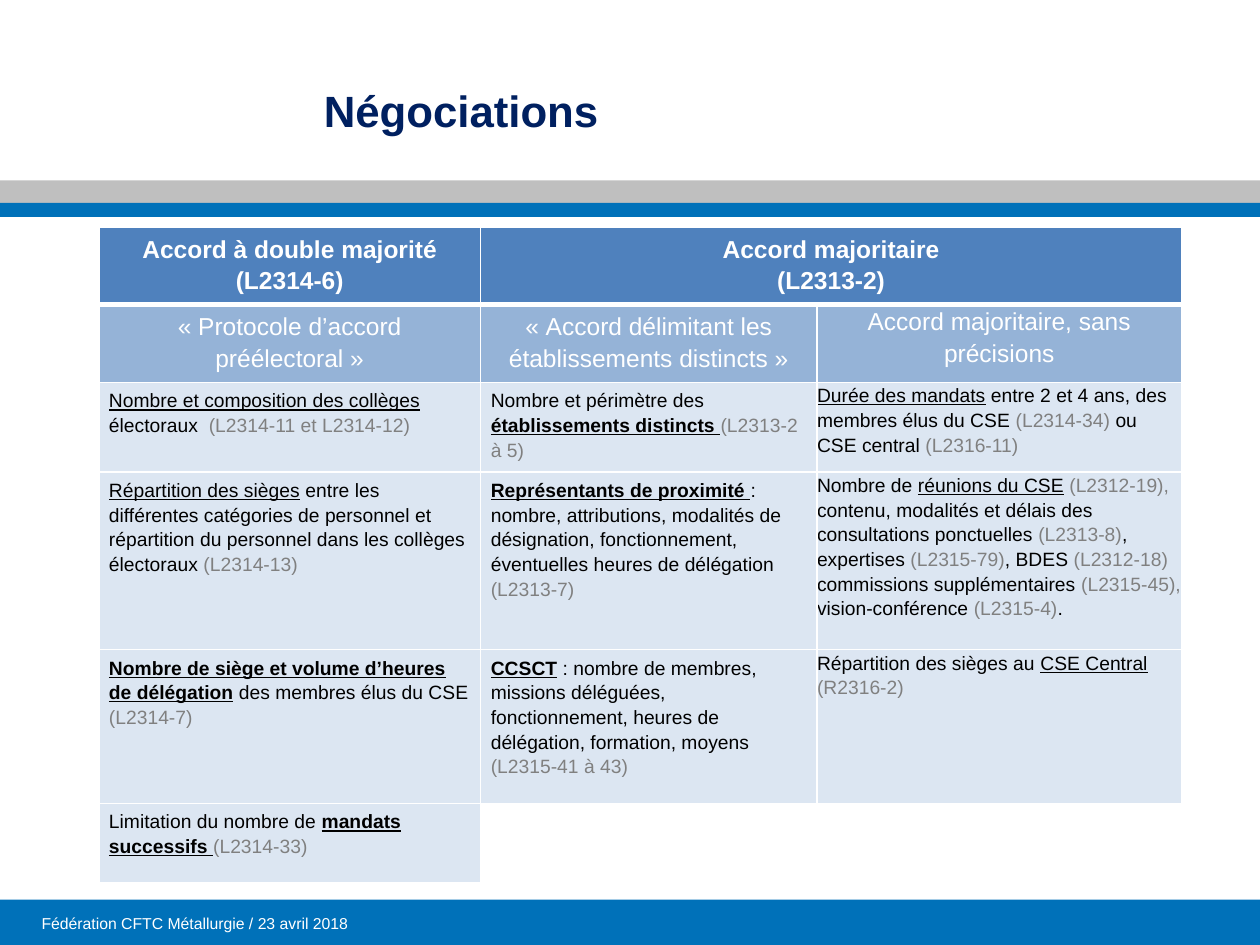
from typing import NamedTuple

from lxml.etree import SubElement
from pptx import Presentation
from pptx.dml.color import RGBColor
from pptx.enum.shapes import MSO_SHAPE as Preset
from pptx.enum.text import MSO_ANCHOR as Anchor, PP_ALIGN as Align
from pptx.oxml.ns import qn
from pptx.util import Pt

WHITE = RGBColor(0xFF, 0xFF, 0xFF)
BLACK = RGBColor(0x00, 0x00, 0x00)
NAVY = RGBColor(0x00, 0x20, 0x60)
BLUE = RGBColor(0x00, 0x71, 0xB9)
SILVER = RGBColor(0xBF, 0xBF, 0xBF)
GRAY = RGBColor(0x80, 0x80, 0x80)
HEADER_BLUE = RGBColor(0x4F, 0x81, 0xBD)
SUBHEADER_BLUE = RGBColor(0x95, 0xB3, 0xD7)
PALE_BLUE = RGBColor(0xDC, 0xE6, 0xF2)
FONT = "Arial"


class Band(NamedTuple):
    top: float
    height: float
    color: RGBColor


class Label(NamedTuple):
    text: str
    left: float
    top: float
    width: float
    height: float
    size: float
    color: RGBColor
    bold: bool = False
    anchor: Anchor = Anchor.TOP


class Piece(NamedTuple):
    text: str
    color: RGBColor = BLACK
    bold: bool = False
    underline: bool = False


def article(text: str) -> Piece:
    return Piece(text, color=GRAY)


def topic(text: str) -> Piece:
    return Piece(text, underline=True)


def key_topic(text: str) -> Piece:
    return Piece(text, bold=True, underline=True)


BANDS = [
    Band(514.1, 25.9, BLUE),
    Band(103, 13, SILVER),
    Band(116, 7.9, BLUE),
]
TITLE = Label("Négociations", 157.7, 44.6, 501.8, 54.7, 25, NAVY, bold=True)
FOOTER = Label("Fédération CFTC Métallurgie / 23 avril 2018",
               17.3, 514.8, 227.5, 25.2, 9, WHITE, anchor=Anchor.MIDDLE)

COLUMN_WIDTHS = [218.2, 192.2, 208.4]
ROW_HEIGHTS = [43.2, 43.2, 49.7, 101.5, 87.8, 45.4]
HEADERS = ["Accord à double majorité\v(L2314-6)", "Accord majoritaire\v(L2313-2)"]
SUBHEADERS = [
    "«\u00a0Protocole d’accord préélectoral\u00a0»",
    "«\u00a0Accord délimitant les établissements distincts\u00a0»",
    "Accord majoritaire, sans précisions",
]
SUBJECTS = [
    [
        [topic("Nombre et composition des collèges "), Piece("électoraux  "),
         article("(L2314-11 et L2314-12)")],
        [Piece("Nombre et périmètre des "), key_topic("établissements distincts"),
         topic(" "), article("(L2313-2 à 5)")],
        [topic("Durée des mandats"), Piece(" entre 2 et 4 ans, des membres élus du CSE "),
         article("(L2314-34) "), Piece("ou CSE central "), article("(L2316-11)")],
    ],
    [
        [topic("Répartition des sièges"),
         Piece(" entre les différentes catégories de personnel et répartition "
               "du personnel dans les collèges électoraux "),
         article("(L2314-13)")],
        [key_topic("Représentants de proximité"), topic(" "),
         Piece(": nombre, attributions, modalités de désignation, fonctionnement, "
               "éventuelles heures de délégation "),
         article("(L2313-7)")],
        [Piece("Nombre de "), topic("réunions du CSE"), Piece(" "),
         article("(L2312-19), "),
         Piece("contenu, modalités et délais des consultations ponctuelles "),
         article("(L2313-8)"), Piece(", expertises "), article("(L2315-79)"),
         Piece(", BDES "), article("(L2312-18)"),
         Piece(" commissions supplémentaires "), article("(L2315-45), "),
         Piece("vision-conférence "), article("(L2315-4)"), Piece(".")],
    ],
    [
        [key_topic("Nombre de siège et volume d’heures de délégation"),
         Piece(" des membres élus du CSE "), article("(L2314-7)")],
        [key_topic("CCSCT"),
         Piece(" : nombre de membres, missions déléguées, fonctionnement, "
               "heures de délégation, formation, moyens "),
         article("(L2315-41 à 43)")],
        [Piece("Répartition des sièges au "), topic("CSE Central"), Piece(" "),
         article("(R2316-2)")],
    ],
    [
        [Piece("Limitation du nombre de "), key_topic("mandats successifs "),
         article("(L2314-33)")],
    ],
]


def style(font, size: float, color: RGBColor, bold=False, underline=False) -> None:
    font.name = FONT
    font.size = Pt(size)
    font.bold = bold
    font.underline = underline
    font.color.rgb = color


def draw_band(slide, band: Band, width: int) -> None:
    bar = slide.shapes.add_shape(Preset.RECTANGLE, 0, Pt(band.top), width, Pt(band.height))
    bar.shadow.inherit = False
    bar.fill.solid()
    bar.fill.fore_color.rgb = band.color
    bar.line.fill.background()


def draw_label(slide, label: Label):
    box = slide.shapes.add_textbox(Pt(label.left), Pt(label.top),
                                   Pt(label.width), Pt(label.height))
    frame = box.text_frame
    frame.word_wrap = True
    frame.vertical_anchor = label.anchor
    frame.margin_left = frame.margin_right = Pt(6.5)
    frame.margin_top = frame.margin_bottom = Pt(3.6)
    frame.text = label.text
    paragraph = frame.paragraphs[0]
    style(paragraph.runs[0].font, label.size, label.color, label.bold)
    return paragraph


def draw_borders(cell, top: float, bottom: float) -> None:
    properties = cell._tc.get_or_add_tcPr()
    for side, weight in (("L", 1), ("R", 1), ("T", top), ("B", bottom)):
        line = SubElement(properties, qn(f"a:ln{side}"), w=str(Pt(weight)))
        fill = SubElement(line, qn("a:solidFill"))
        SubElement(fill, qn("a:srgbClr"), val=str(WHITE))


def fill_cell(cell, color: RGBColor, pieces: list[Piece], size: float,
              align: Align, inset: bool) -> None:
    cell.fill.solid()
    cell.fill.fore_color.rgb = color
    cell.margin_left = cell.margin_right = Pt(5.8 if inset else 0)
    cell.margin_top = cell.margin_bottom = Pt(2.9 if inset else 0)
    paragraph = cell.text_frame.paragraphs[0]
    paragraph.alignment = align
    paragraph.line_spacing = 1.15
    paragraph.space_after = Pt(10)
    for piece in pieces:
        if "\v" in piece.text:
            paragraph.text = piece.text
            runs = paragraph.runs
        else:
            runs = [paragraph.add_run()]
            runs[0].text = piece.text
        for run in runs:
            style(run.font, size, piece.color, piece.bold, piece.underline)


def draw_agreements(slide) -> None:
    table = slide.shapes.add_table(len(ROW_HEIGHTS), len(COLUMN_WIDTHS), Pt(56.5), Pt(129.6),
                                   Pt(sum(COLUMN_WIDTHS)), Pt(sum(ROW_HEIGHTS))).table
    table.first_row = table.horz_banding = False
    for column, width in zip(table.columns, COLUMN_WIDTHS):
        column.width = Pt(width)
    for index, (row, height) in enumerate(zip(table.rows, ROW_HEIGHTS)):
        row.height = Pt(height)
        for cell in row.cells:
            draw_borders(cell, 3 if index == 1 else 1, 3 if index == 0 else 1)
            cell.fill.background()
    table.cell(0, 1).merge(table.cell(0, 2))

    for column, text in enumerate(HEADERS):
        fill_cell(table.cell(0, column), HEADER_BLUE, [Piece(text, WHITE, bold=True)],
                  14, Align.CENTER, True)
    for column, text in enumerate(SUBHEADERS):
        fill_cell(table.cell(1, column), SUBHEADER_BLUE, [Piece(text, WHITE)],
                  14, Align.CENTER, column < 2)
    for row, subjects in enumerate(SUBJECTS, start=2):
        for column, pieces in enumerate(subjects):
            fill_cell(table.cell(row, column), PALE_BLUE, pieces, 11, Align.LEFT, column < 2)


def main() -> None:
    deck = Presentation()
    deck.slide_width, deck.slide_height = Pt(720), Pt(540)
    slide = deck.slides.add_slide(deck.slide_layouts[6])
    for band in BANDS:
        draw_band(slide, band, deck.slide_width)
    title_indent = draw_label(slide, TITLE)._p.get_or_add_pPr()
    title_indent.set("marL", str(Pt(40.3)))
    title_indent.set("indent", str(-Pt(19.4)))
    draw_label(slide, FOOTER)
    draw_agreements(slide)
    deck.save("out.pptx")


if __name__ == "__main__":
    main()
